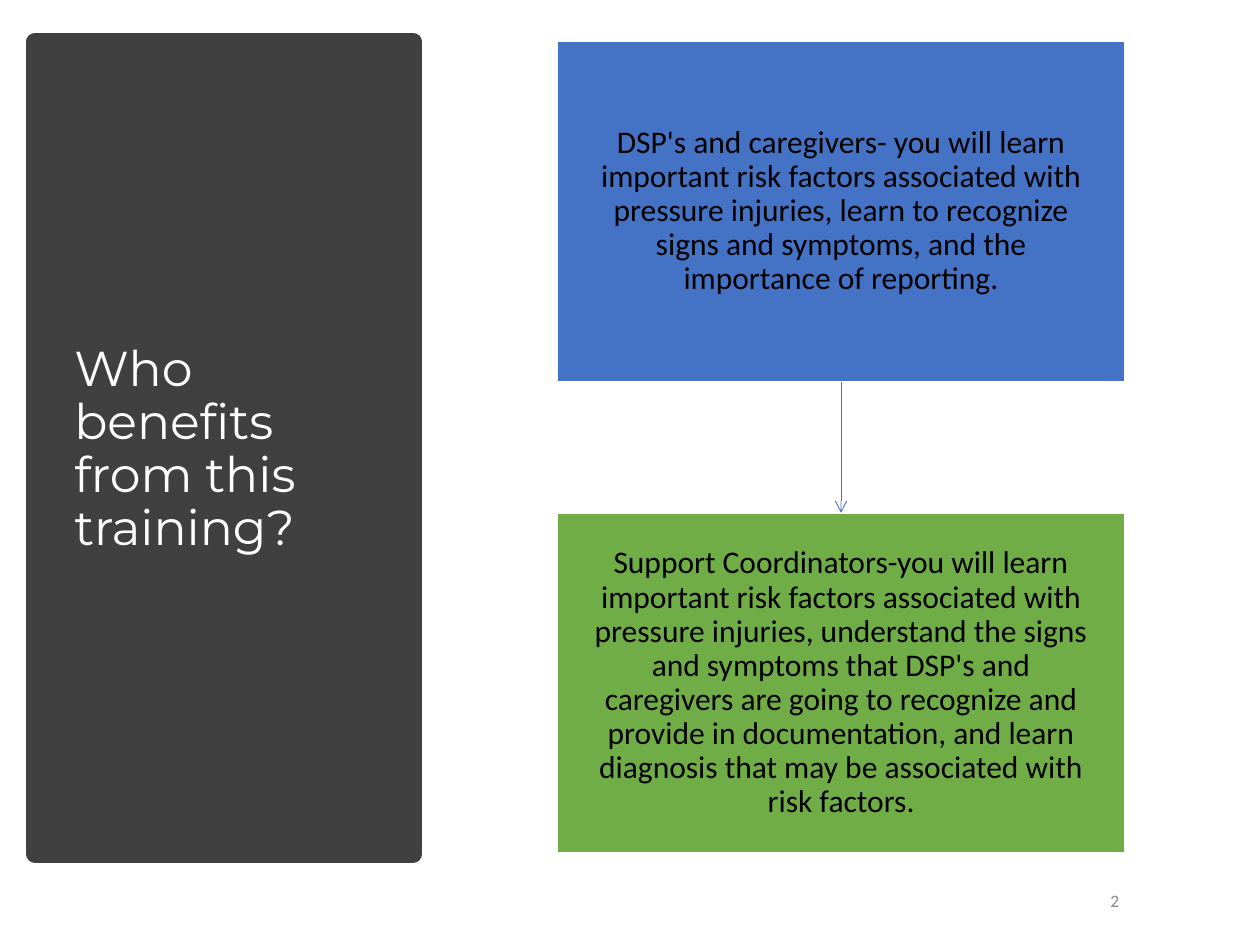
from lxml import etree
from pptx import Presentation
from pptx.dml.color import RGBColor
from pptx.enum.shapes import MSO_CONNECTOR, MSO_SHAPE
from pptx.enum.text import MSO_ANCHOR, MSO_AUTO_SIZE, PP_ALIGN
from pptx.oxml.ns import qn
from pptx.util import Inches, Pt

RECTANGLE, OVAL = MSO_SHAPE.RECTANGLE, MSO_SHAPE.OVAL
LEFT, CENTER, RIGHT = PP_ALIGN.LEFT, PP_ALIGN.CENTER, PP_ALIGN.RIGHT
BOTTOM_SIDE, TOP_SIDE = 2, 0

TITLE = "Who benefits from this training?"
PAGE_NUMBER = "2"
AUDIENCES = [
    ("4472C4", "DSP's and caregivers- you will learn important risk factors "
     "associated with pressure injuries, learn to recognize signs and symptoms, "
     "and the importance of reporting."),
    ("70AD47", "Support Coordinators-you will learn important risk factors "
     "associated with pressure injuries, understand the signs and symptoms that "
     "DSP's and caregivers are going to recognize and provide in documentation, "
     "and learn diagnosis that may be associated with risk factors."),
]
TOP = 0.33
BOX_LEFT, BOX_WIDTH, BOX_HEIGHT, BOX_GAP = 4.42, 4.51, 2.7, 1.04


def color(value):
    return RGBColor.from_string(value)


def add_block(slide, kind, box, fill=None, line=None, line_width=1):
    shape = slide.shapes.add_shape(kind, *map(Inches, box))
    shape.shadow.inherit = False
    if fill:
        shape.fill.solid()
        shape.fill.fore_color.rgb = color(fill)
    else:
        shape.fill.background()
    if line:
        shape.line.color.rgb = color(line)
        shape.line.width = Pt(line_width)
    else:
        shape.line.fill.background()
    return shape


def write(shape, text, font_name, size, font_color, alignment, line_spacing=1.0):
    frame = shape.text_frame
    frame.text = text
    frame.word_wrap = True
    frame.auto_size = MSO_AUTO_SIZE.NONE
    frame.vertical_anchor = MSO_ANCHOR.MIDDLE
    paragraph = frame.paragraphs[0]
    paragraph.alignment = alignment
    paragraph.line_spacing = line_spacing
    paragraph.font.name = font_name
    paragraph.font.size = Pt(size)
    paragraph.font.color.rgb = color(font_color)
    return frame


def add_arrow(slide, upper, lower):
    arrow = slide.shapes.add_connector(MSO_CONNECTOR.STRAIGHT, 0, 0, 0, 0)
    arrow.begin_connect(upper, BOTTOM_SIDE)
    arrow.end_connect(lower, TOP_SIDE)
    arrow.line.color.rgb = color("4472C4")
    arrow.line.width = Pt(0.5)
    etree.SubElement(arrow.line._get_or_add_ln(), qn("a:tailEnd"), type="arrow")
    etree.SubElement(arrow._element.spPr, qn("a:effectLst"))


def main():
    presentation = Presentation()
    presentation.slide_width, presentation.slide_height = Inches(10), Inches(7.5)
    title_only = presentation.slide_layouts[5]
    slide = presentation.slides.add_slide(title_only)

    panel = add_block(slide, RECTANGLE, (0.28, TOP, 3, 6.45), "404040", "404040", 10)
    title = slide.shapes.title
    title._element.addprevious(panel._element)  # panel goes behind the title
    title.left, title.top, title.width, title.height = map(Inches, (0.49, 0.7, 2.6, 5.75))
    write(title, TITLE, "Montserrat", 28, "FFFFFF", LEFT, 0.9)

    boxes = []
    for row, (fill, text) in enumerate(AUDIENCES):
        top = TOP + row * (BOX_HEIGHT + BOX_GAP)
        box = add_block(slide, RECTANGLE, (BOX_LEFT, top, BOX_WIDTH, BOX_HEIGHT),
                        fill, "FFFFFF")
        frame = write(box, text, "Calibri", 18, "000000", CENTER, 0.9)
        frame.margin_left = frame.margin_right = Inches(0.22)
        frame.margin_top = frame.margin_bottom = Inches(0.23)
        boxes.append(box)
    add_arrow(slide, *boxes)

    number = add_block(slide, OVAL, (7.06, 6.95, 2.25, 0.4))
    write(number, PAGE_NUMBER, "Calibri", 10, "898989", RIGHT)
    presentation.save("out.pptx")


if __name__ == "__main__":
    main()
